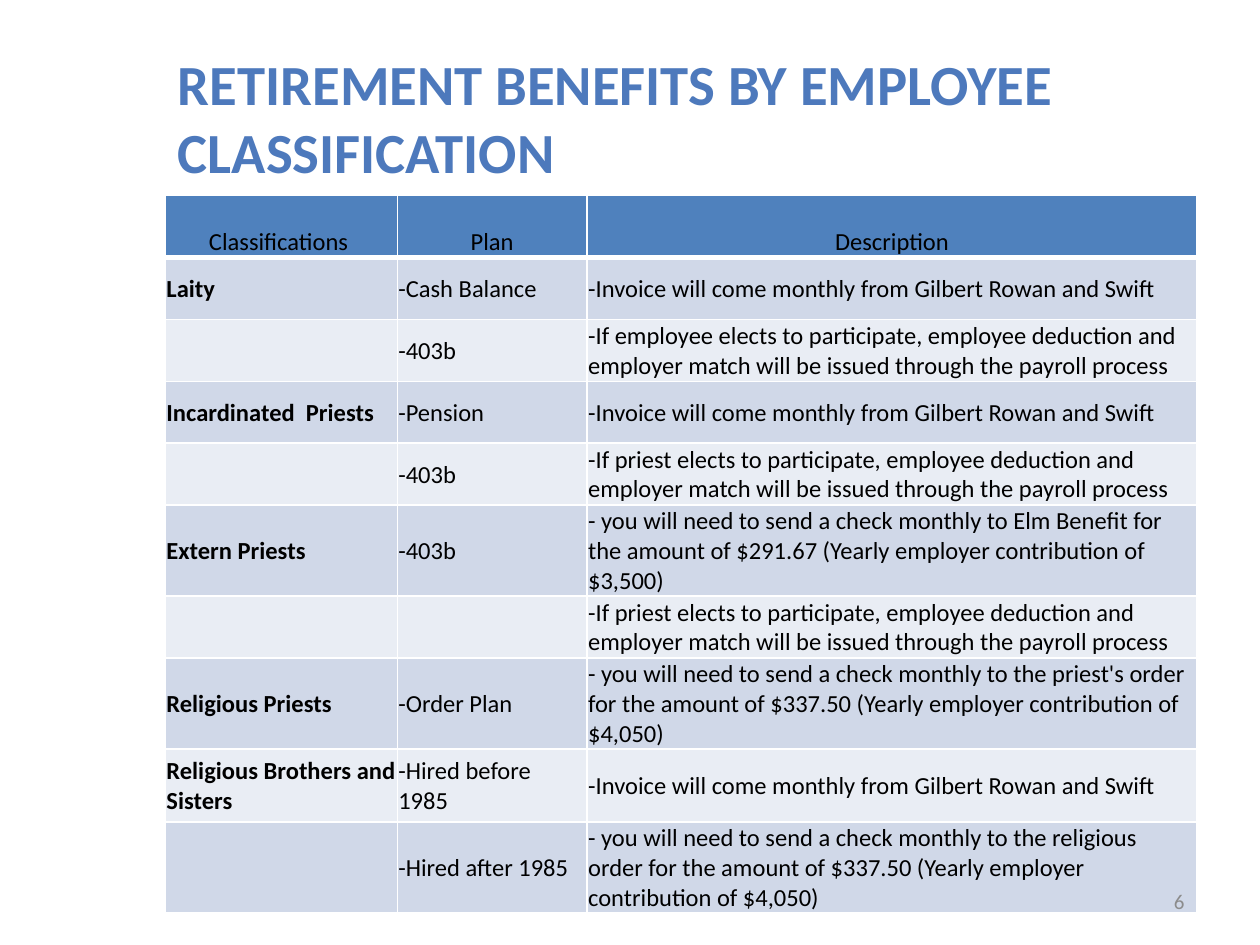
from typing import NamedTuple

from lxml import etree
from pptx import Presentation
from pptx.dml.color import RGBColor
from pptx.enum.text import MSO_ANCHOR, MSO_AUTO_SIZE, PP_ALIGN
from pptx.oxml.ns import qn
from pptx.util import Pt

LEFT, CENTER, RIGHT = PP_ALIGN.LEFT, PP_ALIGN.CENTER, PP_ALIGN.RIGHT
MIDDLE, BOTTOM = MSO_ANCHOR.MIDDLE, MSO_ANCHOR.BOTTOM
FIXED_SIZE = MSO_AUTO_SIZE.NONE

BLACK = RGBColor(0x00, 0x00, 0x00)
WHITE = RGBColor(0xFF, 0xFF, 0xFF)
GRAY = RGBColor(0x8C, 0x8C, 0x8C)
HEADER_BLUE = RGBColor(0x4F, 0x81, 0xBD)
BANDS = (RGBColor(0xD0, 0xD8, 0xE8), RGBColor(0xE9, 0xED, 0xF4))
TITLE_STOPS = (
    (0, RGBColor(0x74, 0x94, 0xC9)),
    (49, RGBColor(0x4D, 0x79, 0xBC)),
    (50, RGBColor(0x34, 0x6A, 0xAA)),
    (92, RGBColor(0x32, 0x5F, 0x94)),
    (100, RGBColor(0x31, 0x5D, 0x91)),
)

FONT = "Calibri"
TABLE_LEFT, TABLE_TOP = 94.5, 111.75
COLUMN_WIDTHS = (132.5, 108.5, 348.5)
ONE_OR_TWO_LINES, LOOSE_LINES, THREE_LINES = 35.4, 41.8, 52

INVOICE = "-Invoice will come monthly from Gilbert Rowan and Swift"
ELECTION = ("-If {} elects to participate, employee deduction and "
            "employer match will be issued through the payroll process")
CHECK = ("- you will need to send a check monthly to {} for the amount of {} "
         "(Yearly employer contribution of {})")


class BenefitRow(NamedTuple):
    classification: str
    plan: str
    description: str
    height: float = ONE_OR_TWO_LINES


HEADER = BenefitRow("Classifications ", "Plan", "Description")
BENEFITS = (
    BenefitRow("Laity", "-Cash Balance", INVOICE),
    BenefitRow("", "-403b", ELECTION.format("employee")),
    BenefitRow("Incardinated  Priests", "-Pension", INVOICE),
    BenefitRow("", "-403b", ELECTION.format("priest")),
    BenefitRow("Extern Priests", "-403b",
               CHECK.format("Elm Benefit", "$291.67", "$3,500"), THREE_LINES),
    BenefitRow("", "", ELECTION.format("priest")),
    BenefitRow("Religious Priests", "-Order Plan",
               CHECK.format("the priest's order", "$337.50", "$4,050"), THREE_LINES),
    BenefitRow("Religious Brothers and Sisters", "-Hired before 1985", INVOICE,
               LOOSE_LINES),
    BenefitRow("", "-Hired after 1985",
               CHECK.format("the religious order", "$337.50", "$4,050"), THREE_LINES),
)


def write_text(text_frame, text: str, size: float, color: RGBColor,
               alignment=LEFT, bold: bool = False) -> None:
    text_frame.text = text
    paragraph = text_frame.paragraphs[0]
    paragraph.alignment = alignment
    for run in paragraph.runs:
        run.font.name = FONT
        run.font.size = Pt(size)
        run.font.bold = bold
        run.font.color.rgb = color


def add_gradient_fill(run) -> None:
    """Replace the solid text fill with the vertical title gradient."""
    solid = run.font._element.find(qn("a:solidFill"))
    gradient = etree.Element(qn("a:gradFill"))
    stops = etree.SubElement(gradient, qn("a:gsLst"))
    for percent, color in TITLE_STOPS:
        stop = etree.SubElement(stops, qn("a:gs"), pos=str(percent * 1000))
        etree.SubElement(stop, qn("a:srgbClr"), val=str(color))
    etree.SubElement(gradient, qn("a:lin"), ang="5400000")
    solid.getparent().replace(solid, gradient)


def set_borders(cell, bottom_width: float) -> None:
    properties = cell._tc.get_or_add_tcPr()
    widths = {"a:lnL": 1, "a:lnR": 1, "a:lnT": 1, "a:lnB": bottom_width}
    for position, (tag, width) in enumerate(widths.items()):
        line = etree.Element(qn(tag), w=str(Pt(width)))
        fill = etree.SubElement(line, qn("a:solidFill"))
        etree.SubElement(fill, qn("a:srgbClr"), val=str(WHITE))
        properties.insert(position, line)


def add_title(slide) -> None:
    title = slide.shapes.title
    title.left, title.top, title.width, title.height = Pt(94.5), Pt(21.6), Pt(589.5), Pt(90)
    text_frame = title.text_frame
    text_frame.auto_size = FIXED_SIZE
    text_frame.vertical_anchor = MIDDLE
    write_text(text_frame, "RETIREMENT BENEFITS BY EMPLOYEE CLASSIFICATION",
               32.4, TITLE_STOPS[1][1], bold=True)
    add_gradient_fill(text_frame.paragraphs[0].runs[0])


def add_benefit_table(slide) -> None:
    rows = (HEADER, *BENEFITS)
    table = slide.shapes.add_table(
        len(rows), len(COLUMN_WIDTHS), Pt(TABLE_LEFT), Pt(TABLE_TOP),
        Pt(sum(COLUMN_WIDTHS)), Pt(sum(row.height for row in rows))).table
    for column, width in zip(table.columns, COLUMN_WIDTHS):
        column.width = Pt(width)
    for row_index, row in enumerate(rows):
        is_header = row_index == 0
        table.rows[row_index].height = Pt(row.height)
        texts = (row.classification, row.plan, row.description)
        for column_index, text in enumerate(texts):
            cell = table.cell(row_index, column_index)
            cell.margin_left = cell.margin_right = cell.margin_top = Pt(0.6)
            cell.margin_bottom = 0
            cell.vertical_anchor = BOTTOM if is_header else MIDDLE
            cell.fill.solid()
            cell.fill.fore_color.rgb = HEADER_BLUE if is_header else BANDS[(row_index - 1) % 2]
            set_borders(cell, 3 if is_header else 1)
            write_text(cell.text_frame, text, 14, BLACK,
                       CENTER if is_header else LEFT,
                       bold=column_index == 0 and not is_header)


def add_slide_number(slide) -> None:
    text_frame = slide.shapes.add_textbox(Pt(516), Pt(500.5), Pt(168), Pt(28.75)).text_frame
    text_frame.word_wrap = True
    text_frame.vertical_anchor = MIDDLE
    write_text(text_frame, "6", 12, GRAY, RIGHT)


def main() -> None:
    presentation = Presentation()
    presentation.slide_width, presentation.slide_height = Pt(720), Pt(540)
    slide = presentation.slides.add_slide(presentation.slide_layouts.get_by_name("Title Only"))
    add_title(slide)
    add_benefit_table(slide)
    add_slide_number(slide)
    presentation.save("out.pptx")


if __name__ == "__main__":
    main()
